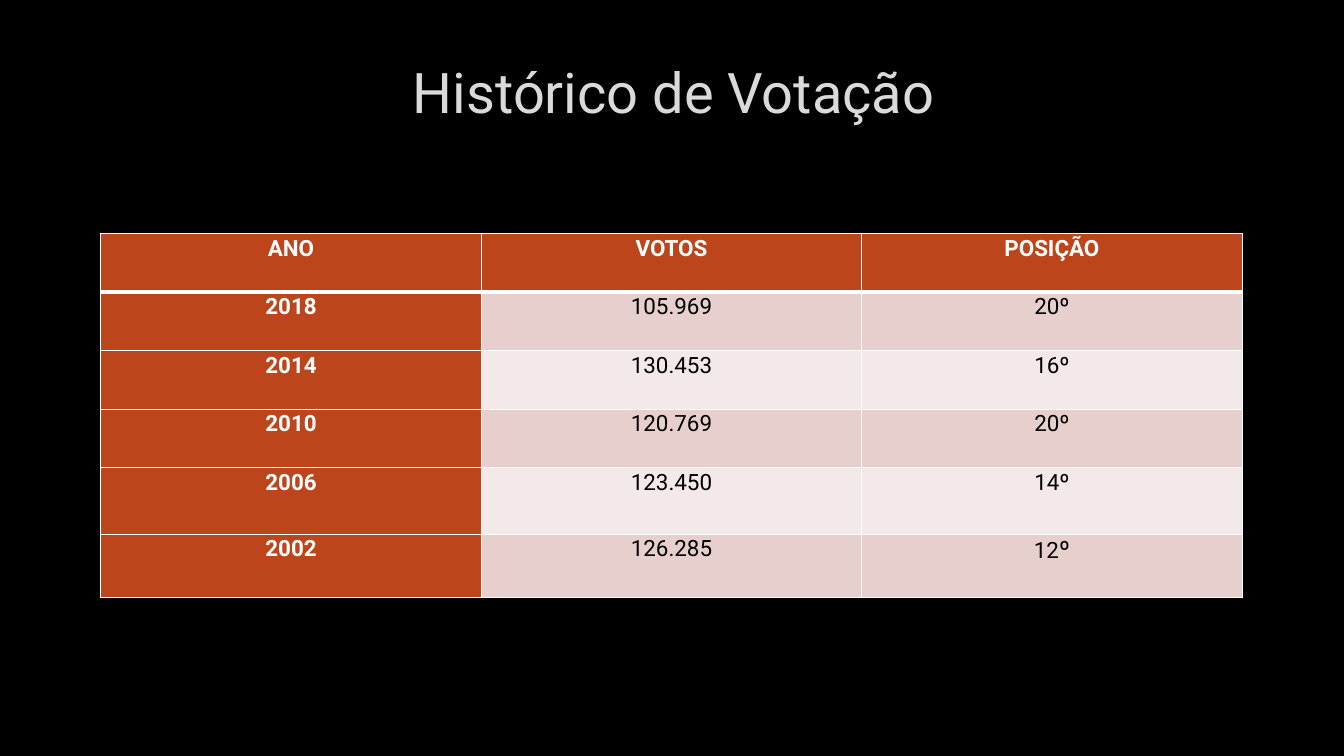
from pptx import Presentation
from pptx import util as u
from pptx.dml.color import RGBColor
from pptx.enum import text
from pptx.oxml import parse_xml
from pptx.oxml.ns import nsdecls

# Content
TITLE = "Histórico de Votação"
HEADERS = ("ANO", "VOTOS", "POSIÇÃO")
RESULTS = [
    ("2018", "105.969", "20º"),
    ("2014", "130.453", "16º"),
    ("2010", "120.769", "20º"),
    ("2006", "123.450", "14º"),
    ("2002", "126.285", "12º"),
]

# Layout and formats
LEFT, WIDTH = 1, 11.32
TABLE_TOP = 2.32
ROW_HEIGHTS = (0.58, 0.58, 0.58, 0.58, 0.66, 0.63)
FONT = "Roboto"
ACCENT, BANDS = "BC451B", ("E7CFCD", "F3E9E8")
WHITE, BLACK, TITLE_COLOR = "FFFFFF", "000000", "DADADA"
CELL_FORMAT = {"margin_left": u.Inches(0.11), "margin_right": u.Inches(0.11),
               "margin_top": 0, "margin_bottom": 0}
TITLE_FORMAT = {"word_wrap": True, "margin_top": u.Inches(0.08),
                "margin_left": u.Inches(0.14),
                "vertical_anchor": text.MSO_ANCHOR.TOP}


def color(value):
    return RGBColor.from_string(value)


def apply(target, values):
    for name, value in values.items():
        setattr(target, name, value)


def add_run(paragraph, content, size, font_color, bold=False):
    run = paragraph.add_run()
    run.text = content
    apply(run.font, {"name": FONT, "size": u.Pt(size), "bold": bold})
    run.font.color.rgb = color(font_color)
    return run


def set_borders(cell, widths):
    """Draw the white cell edges, ahead of the fill in the cell properties."""
    properties = cell._tc.get_or_add_tcPr()
    for index, (side, width) in enumerate(widths.items()):
        properties.insert(index, parse_xml(
            f'<a:ln{side} {nsdecls("a")} w="{u.Pt(width)}"><a:solidFill>'
            f'<a:srgbClr val="{WHITE}"/></a:solidFill></a:ln{side}>'))


def add_results_table(slide):
    rows = [HEADERS, *RESULTS]
    frame = slide.shapes.add_table(
        len(rows), len(HEADERS), u.Inches(LEFT), u.Inches(TABLE_TOP),
        u.Inches(WIDTH), u.Inches(sum(ROW_HEIGHTS)))
    table = frame.table
    apply(table, {"first_col": True})
    for column in table.columns:
        column.width = u.Inches(WIDTH / len(HEADERS))
    for row_index, values in enumerate(rows):
        table.rows[row_index].height = u.Inches(ROW_HEIGHTS[row_index])
        for column_index, value in enumerate(values):
            cell = table.cell(row_index, column_index)
            heading = row_index == 0 or column_index == 0
            apply(cell, CELL_FORMAT)
            cell.fill.solid()
            cell.fill.fore_color.rgb = color(
                ACCENT if heading else BANDS[(row_index - 1) % 2])
            # The header row is ruled off with a thicker line
            set_borders(cell, {"L": 1, "R": 1,
                               "T": 3 if row_index == 1 else 1,
                               "B": 3 if row_index == 0 else 1})
            paragraph = cell.text_frame.paragraphs[0]
            apply(paragraph, {"alignment": text.PP_ALIGN.CENTER,
                              "line_spacing": 1.07})
            font_color = WHITE if heading else BLACK
            if value == "12º":  # larger ordinal sign in the last row
                add_run(paragraph, value[:-1], 16, font_color)
                add_run(paragraph, value[-1], 17, font_color)
            else:
                add_run(paragraph, value, 16, font_color, heading)


def add_title(slide):
    box = slide.shapes.add_textbox(u.Inches(LEFT), u.Inches(0.49),
                                   u.Inches(WIDTH), u.Inches(0.95))
    apply(box.text_frame, TITLE_FORMAT)
    paragraph = box.text_frame.paragraphs[0]
    paragraph.alignment = text.PP_ALIGN.CENTER
    add_run(paragraph, TITLE, 40, TITLE_COLOR)


def main():
    presentation = Presentation()
    apply(presentation, {"slide_width": u.Inches(13.33),
                         "slide_height": u.Inches(7.5)})
    slide = presentation.slides.add_slide(presentation.slide_layouts[6])
    slide.background.fill.solid()
    slide.background.fill.fore_color.rgb = color(BLACK)
    add_results_table(slide)
    add_title(slide)
    presentation.save("out.pptx")


if __name__ == "__main__":
    main()
